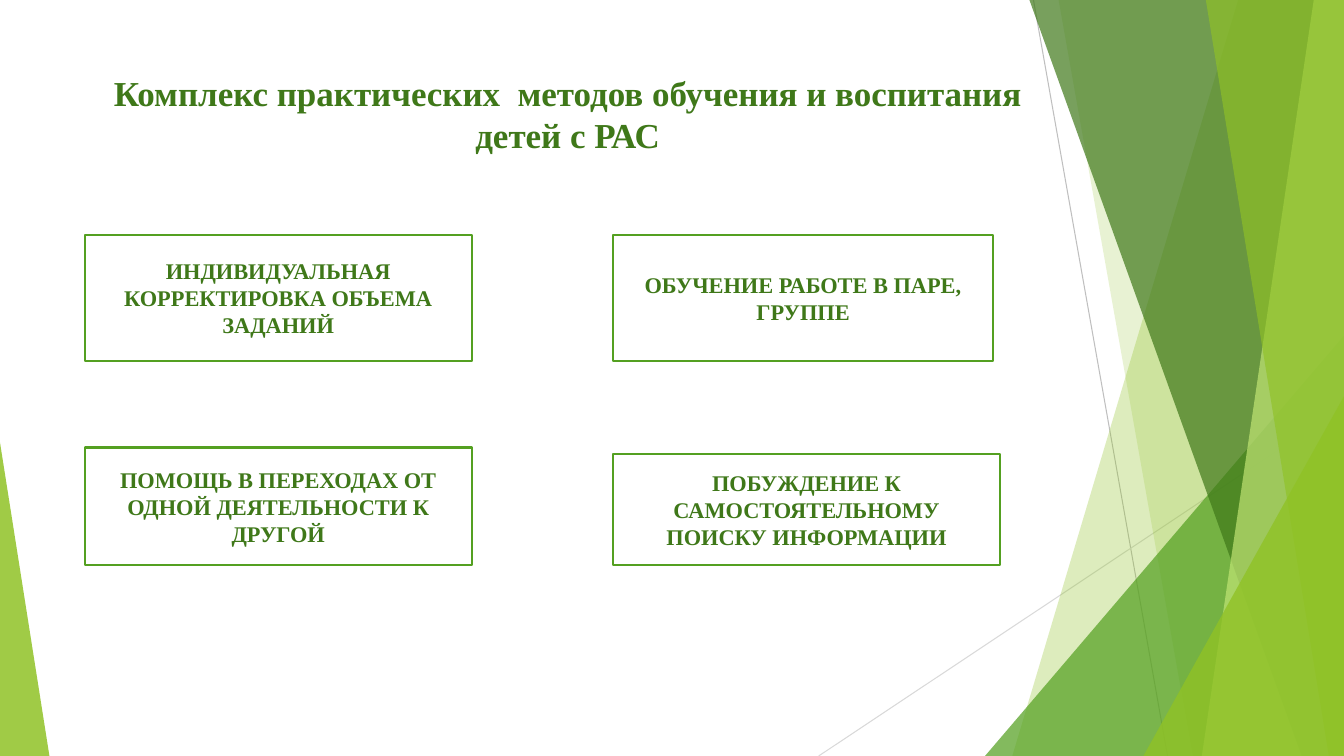
from dataclasses import dataclass

from lxml import etree
from pptx import Presentation
from pptx.dml.color import RGBColor
from pptx.enum.shapes import MSO_CONNECTOR, MSO_SHAPE
from pptx.enum.text import MSO_ANCHOR, PP_ALIGN
from pptx.oxml.ns import qn
from pptx.util import Pt

PX = 9144
WIDTH, HEIGHT = 1333, 750
STRAIGHT = MSO_CONNECTOR.STRAIGHT
RECTANGLE = MSO_SHAPE.RECTANGLE
TRIANGLE = MSO_SHAPE.ISOSCELES_TRIANGLE
MIDDLE = MSO_ANCHOR.MIDDLE
CENTER = PP_ALIGN.CENTER


@dataclass(frozen=True)
class Theme:
    font: str = "Times New Roman"
    title_size: int = 25
    method_size: int = 16
    lime: str = "90C226"
    pale_lime: str = "C0E474"
    green: str = "54A021"
    dark_green: str = "3F7819"
    white: str = "FFFFFF"
    gray: str = "BFBFBF"
    light_gray: str = "D9D9D9"
    hairline: float = 0.75
    border: float = 1.5


THEME = Theme()

TITLE = "Комплекс практических  методов обучения и воспитания детей с РАС"

METHODS = [
    ("ИНДИВИДУАЛЬНАЯ КОРРЕКТИРОВКА ОБЪЕМА ЗАДАНИЙ", 84, 233, 384, 125),
    ("ОБУЧЕНИЕ РАБОТЕ В ПАРЕ, ГРУППЕ", 608, 233, 377, 125),
    ("ПОМОЩЬ В ПЕРЕХОДАХ ОТ ОДНОЙ ДЕЯТЕЛЬНОСТИ К ДРУГОЙ", 84, 444, 384, 117),
    ("ПОБУЖДЕНИЕ К САМОСТОЯТЕЛЬНОМУ ПОИСКУ ИНФОРМАЦИИ", 608, 450, 384, 111),
]


def px(*lengths):
    return [length * PX for length in lengths]


def fill_shape(shape, color, opacity=100):
    shape.shadow.inherit = False
    shape.fill.solid()
    shape.fill.fore_color.rgb = RGBColor.from_string(color)
    if opacity < 100:
        color_element = shape.fill._xPr.find(qn("a:solidFill"))[0]
        alpha = etree.SubElement(color_element, qn("a:alpha"))
        alpha.set("val", str(opacity * 1000))


def add_hairline(slide, start, end, color):
    line = slide.shapes.add_connector(STRAIGHT, *px(*start, *end))
    line.line.color.rgb = RGBColor.from_string(color)
    line.line.width = Pt(THEME.hairline)
    etree.SubElement(line._element.spPr, qn("a:effectLst"))


def add_band(slide, top_left, bottom_left, color, opacity):
    builder = slide.shapes.build_freeform(top_left, 0, scale=PX)
    builder.add_line_segments(
        [(WIDTH, 0), (WIDTH, HEIGHT), (bottom_left, HEIGHT)], close=True
    )
    band = builder.convert_to_shape()
    fill_shape(band, color, opacity)
    band.line.fill.background()


def add_corner(slide, left, top, width, apex, color, opacity):
    corner = slide.shapes.add_shape(
        TRIANGLE, *px(left, top, width, HEIGHT - top)
    )
    corner.adjustments[0] = apex
    fill_shape(corner, color, opacity)
    corner.line.fill.background()


def write_text(shape, text, size):
    shape.text_frame.word_wrap = True
    paragraph = shape.text_frame.paragraphs[0]
    paragraph.text = text
    paragraph.alignment = CENTER
    paragraph.font.name = THEME.font
    paragraph.font.size = Pt(size)
    paragraph.font.bold = True
    paragraph.font.color.rgb = RGBColor.from_string(THEME.dark_green)


def add_title(slide):
    title = slide.shapes.add_textbox(*px(90, 66, 946, 167))
    write_text(title, TITLE, THEME.title_size)


def add_method(slide, text, left, top, width, height):
    box = slide.shapes.add_shape(RECTANGLE, *px(left, top, width, height))
    fill_shape(box, THEME.white)
    box.line.color.rgb = RGBColor.from_string(THEME.green)
    box.line.width = Pt(THEME.border)
    box.text_frame.vertical_anchor = MIDDLE
    write_text(box, text, THEME.method_size)


def add_decoration(slide):
    add_hairline(slide, (1025, 0), (1158, HEIGHT), THEME.gray)
    add_hairline(slide, (WIDTH, 403), (812, HEIGHT), THEME.light_gray)
    add_band(slide, 1228, 1004, THEME.lime, 30)
    add_band(slide, 1050, 1183, THEME.lime, 20)
    add_corner(slide, 977, 333, 356, 1, THEME.green, 72)
    add_band(slide, 1021, 1291, THEME.dark_green, 70)
    add_band(slide, 1303, 1192, THEME.pale_lime, 70)
    add_band(slide, 1196, 1318, THEME.lime, 65)
    add_corner(slide, 1134, 393, 199, 1, THEME.lime, 80)
    add_corner(slide, 0, 439, 49, 0, THEME.lime, 85)


def main():
    presentation = Presentation()
    presentation.slide_width, presentation.slide_height = px(WIDTH, HEIGHT)
    slide = presentation.slides.add_slide(presentation.slide_layouts[6])
    add_decoration(slide)
    add_title(slide)
    for method in METHODS:
        add_method(slide, *method)
    presentation.save("out.pptx")


if __name__ == "__main__":
    main()
